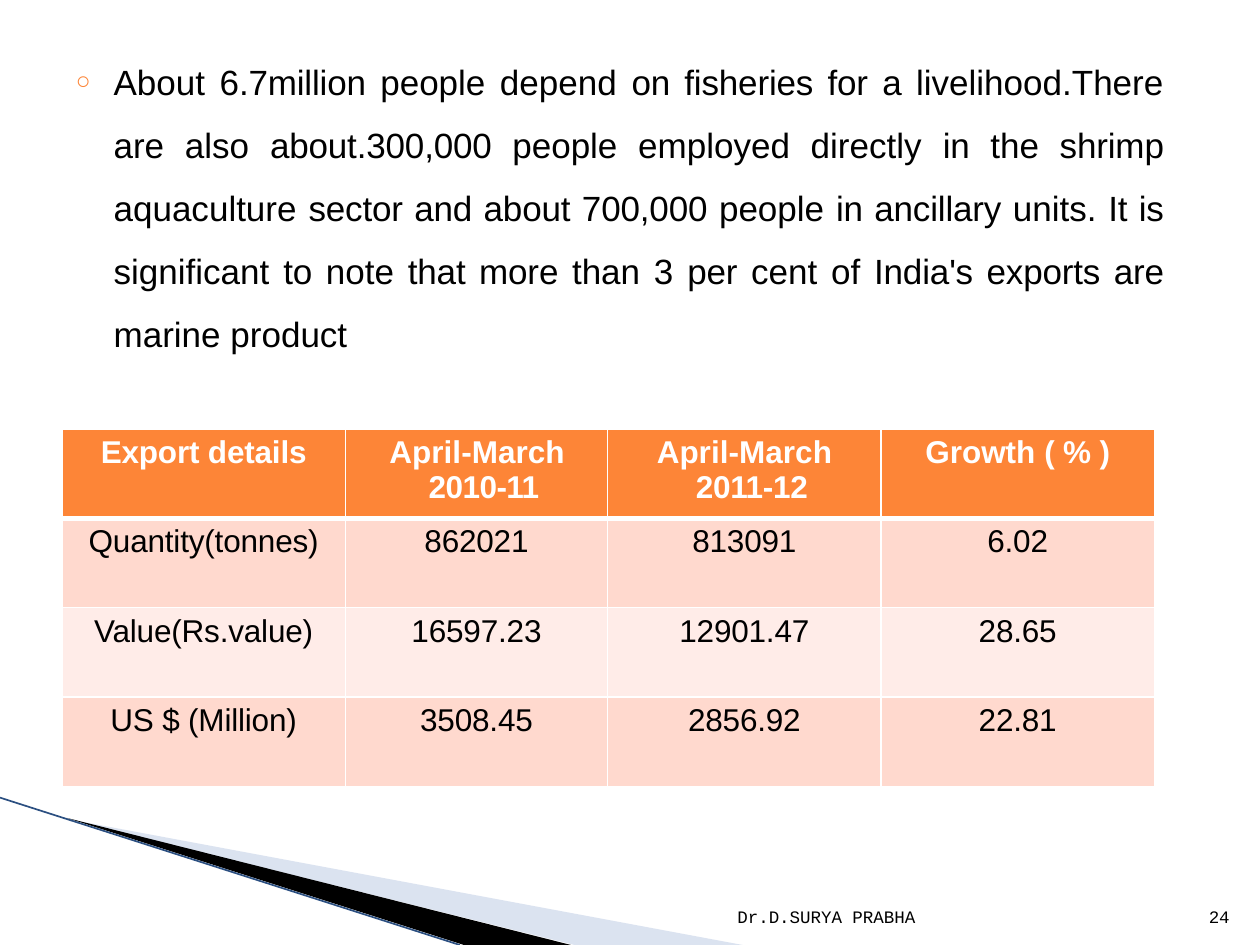
from lxml import etree
from pptx import Presentation
from pptx import util as u
from pptx.dml.color import RGBColor
from pptx.enum import shapes, text
from pptx.oxml import ns

COLORS = {
    "ink": "000000",
    "white": "FFFFFF",
    "orange": "FD8537",
    "peach": "FFD9CE",
    "blush": "FFECE8",
    "pale_blue": "A7B9DB",
    "edge_blue": "2B4F81",
}

LIVELIHOOD_RUNS = [
    "About ", "6.7million ", "people depend ", "on fisheries for ",
    "a livelihood.There are also ", "about.300,000 ",
    "people employed directly ", "in ", "the ", "shrimp ", "aquaculture ",
    "sector and about 700,000 ", "people ", "in ancillary ", "units. ",
    "It is ", "significant ", "to ", "note ", "that more ", "than 3 ",
    "per ", "cent of ", "India's exports are ", "marine product",
]

APRIL_MARCH = [("A", -0.6), ("pri", 0), ("l", 0.1), ("-Ma", 0), ("r", -0.1), ("ch ", 0)]
HEADINGS = [
    [("Export details", -0.1)],
    APRIL_MARCH + [("2010-11", -0.3)],
    APRIL_MARCH + [("2011-12", -0.2)],
    [("Growth ", 0), ("( % )", -0.1)],
]
EXPORTS = [
    ["Quantity(tonnes)", "862021", "813091", "6.02"],
    ["Value(Rs.value)", "16597.23", "12901.47", "28.65"],
    ["US $ (Million)", "3508.45", "2856.92", "22.81"],
]
COLUMN_WIDTHS = [5.71, 5.29, 5.51, 5.51]
ROW_HEIGHT = 1.8
HANGING = {1: (1.68, -0.79), 2: (1.78, -0.79)}


def rgb(name):
    return RGBColor.from_string(COLORS[name])


def add_child(parent, tag, **attributes):
    return etree.SubElement(parent, ns.qn(tag), attributes)


def add_run(paragraph, wording, size, color="ink", face="Arial", bold=False, spacing=0):
    run = paragraph.add_run()
    run.text = wording
    run.font.size = u.Pt(size)
    run.font.name = face
    run.font.bold = bold
    run.font.color.rgb = rgb(color)
    if spacing:
        run.font._element.set("spc", str(round(spacing * 100)))


def set_indent(paragraph, left, first):
    properties = paragraph._p.get_or_add_pPr()
    properties.set("marL", str(u.Cm(left)))
    properties.set("indent", str(u.Cm(first)))
    return properties


def set_insets(part, left, top, right, bottom):
    part.margin_left, part.margin_top = u.Cm(left), u.Cm(top)
    part.margin_right, part.margin_bottom = u.Cm(right), u.Cm(bottom)


def fill_livelihood(body):
    body.left, body.top, body.width, body.height = map(u.Cm, (1.5, 0.76, 21.96, 7.19))
    frame = body.text_frame
    frame.word_wrap = True
    frame.auto_size = text.MSO_AUTO_SIZE.SHAPE_TO_FIT_TEXT
    set_insets(frame, 0, 0.03, 0, 0)
    paragraph = frame.paragraphs[0]
    paragraph.alignment = text.PP_ALIGN.JUSTIFY
    paragraph.line_spacing = 1.5
    paragraph.space_before = u.Pt(0)
    properties = set_indent(paragraph, 0.79, -0.76)
    bullet_color = add_child(properties, "a:buClr")
    add_child(bullet_color, "a:srgbClr", val=COLORS["orange"])
    add_child(properties, "a:buSzPct", val="70000")
    add_child(properties, "a:buFont", typeface="Arial")
    add_child(properties, "a:buChar", char="○")
    for index, wording in enumerate(LIVELIHOOD_RUNS):
        add_run(paragraph, wording, 20, spacing=-0.1 * (index % 2))


def set_frame(wedge, left, top, width, height):
    shift_x, shift_y = wedge.left - u.Cm(left), wedge.top - u.Cm(top)
    outline = wedge._element.spPr.find(".//" + ns.qn("a:pathLst"))[0]
    for point in outline.iter(ns.qn("a:pt")):
        point.set("x", str(int(point.get("x")) + shift_x))
        point.set("y", str(int(point.get("y")) + shift_y))
    outline.set("w", str(u.Cm(width)))
    outline.set("h", str(u.Cm(height)))
    wedge.left, wedge.top = u.Cm(left), u.Cm(top)
    wedge.width, wedge.height = u.Cm(width), u.Cm(height)


def add_wedge(slide, color, points, frame, alpha=None):
    corners = [(u.Cm(x), u.Cm(y)) for x, y in points]
    builder = slide.shapes.build_freeform(*corners[0])
    builder.add_line_segments(corners[1:], close=True)
    wedge = builder.convert_to_shape()
    set_frame(wedge, *frame)
    wedge.shadow.inherit = False
    wedge.fill.solid()
    wedge.fill.fore_color.rgb = rgb(color)
    wedge.line.fill.background()
    if alpha:
        tint = wedge._element.spPr.find(".//" + ns.qn("a:srgbClr"))
        add_child(tint, "a:alpha", val=str(alpha * 1000))


def add_edge(slide, start, end):
    edge = slide.shapes.add_connector(
        shapes.MSO_CONNECTOR.STRAIGHT, *map(u.Cm, start + end))
    edge.line.color.rgb = rgb("edge_blue")
    edge.line.width = u.Pt(0.95)
    add_child(edge._element.spPr, "a:effectLst")


def style_cell(cell, fill, top=1, bottom=1):
    set_insets(cell, 0, 0.12, 0, 0)
    properties = cell._tc.get_or_add_tcPr()
    for side, width in (("L", 1), ("R", 1), ("T", top), ("B", bottom)):
        border = add_child(properties, f"a:ln{side}", w=str(u.Pt(width)))
        add_child(add_child(border, "a:solidFill"), "a:srgbClr", val=COLORS["white"])
    cell.fill.solid()
    cell.fill.fore_color.rgb = rgb(fill)


def add_export_table(slide):
    table = slide.shapes.add_table(
        len(EXPORTS) + 1, len(HEADINGS), u.Cm(1.25), u.Cm(8.65),
        u.Cm(sum(COLUMN_WIDTHS)), u.Cm(ROW_HEIGHT * (len(EXPORTS) + 1))).table
    for column, width in zip(table.columns, COLUMN_WIDTHS):
        column.width = u.Cm(width)
    for row in table.rows:
        row.height = u.Cm(ROW_HEIGHT)
    for index, heading in enumerate(HEADINGS):
        cell = table.cell(0, index)
        style_cell(cell, "orange", bottom=3)
        paragraph = cell.text_frame.paragraphs[0]
        if index in HANGING:
            paragraph.alignment = text.PP_ALIGN.LEFT
            set_indent(paragraph, *HANGING[index])
        else:
            paragraph.alignment = text.PP_ALIGN.CENTER
        for wording, spacing in heading:
            add_run(paragraph, wording, 18, "white", bold=True, spacing=spacing)
    for row, values in enumerate(EXPORTS, 1):
        for column, value in enumerate(values):
            cell = table.cell(row, column)
            style_cell(cell, "peach" if row % 2 else "blush", top=3 if row == 1 else 1)
            paragraph = cell.text_frame.paragraphs[0]
            paragraph.alignment = text.PP_ALIGN.CENTER
            add_run(paragraph, value, 18, spacing=-0.1)


def add_footer(slide, wording, left, width):
    frame = slide.shapes.add_textbox(*map(u.Cm, (left, 17.79, width, 1.02))).text_frame
    frame.word_wrap = True
    frame.vertical_anchor = text.MSO_ANCHOR.BOTTOM
    paragraph = frame.paragraphs[0]
    paragraph.alignment = text.PP_ALIGN.RIGHT
    add_run(paragraph, wording, 10, face="Courier New")


def main():
    deck = Presentation()
    deck.slide_width, deck.slide_height = u.Cm(25.4), u.Cm(19.05)
    slide = deck.slides.add_slide(deck.slide_layouts[1])
    title = slide.shapes.title._element
    title.getparent().remove(title)
    fill_livelihood(slide.placeholders[1])
    add_wedge(slide, "pale_blue", [(1.4, 16.52), (14.97, 19.05), (11.58, 19.05)],
              (1.98, 13.89, 10.57, 4.01), alpha=40)
    add_wedge(slide, "ink", [(1.35, 16.49), (11.51, 19.05), (9.35, 19.05)],
              (-0.15, 16.08, 10.57, 2.34))
    add_edge(slide, (0, 16.08), (9.27, 19.05))
    add_export_table(slide)
    add_footer(slide, "Dr.D.SURYA PRABHA", 12.17, 6.53)
    add_footer(slide, "24", 24.02, 1.02)
    deck.save("out.pptx")


if __name__ == "__main__":
    main()
